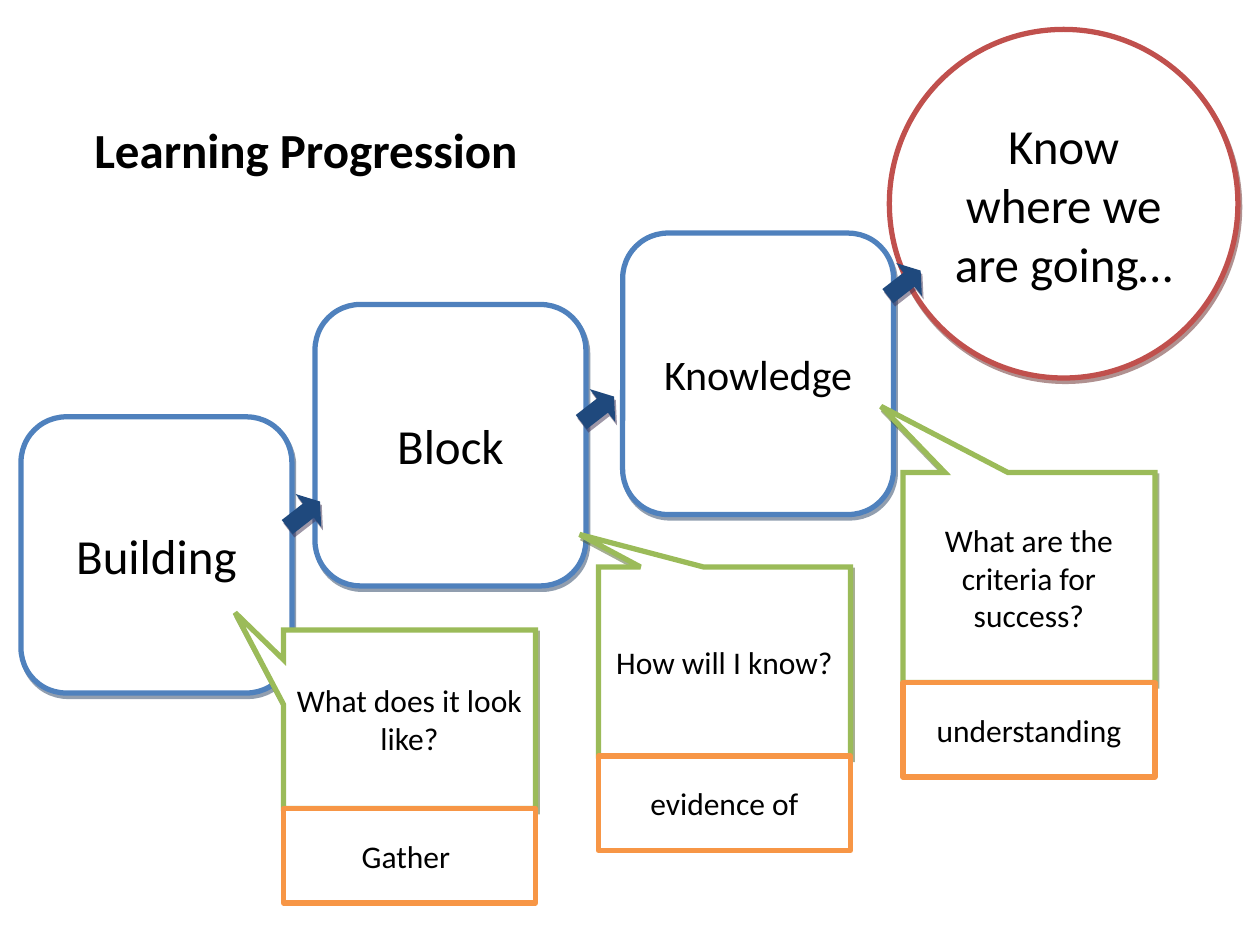
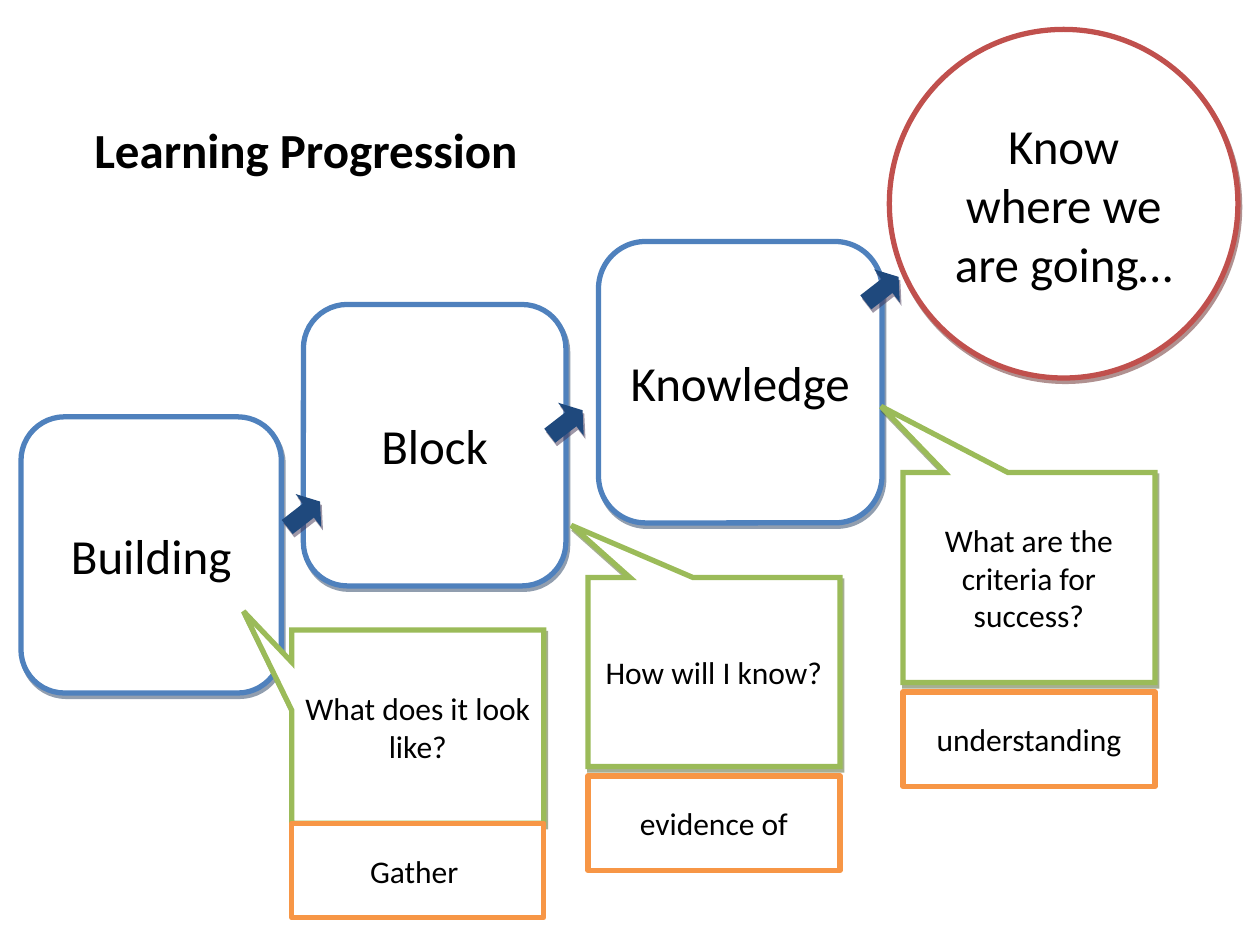
from lxml import etree
from pptx import Presentation
from pptx import util as u
from pptx.dml.color import RGBColor
from pptx.enum import shapes, text
from pptx.oxml import ns

# Shared style
INK = {
    "white": "FFFFFF", "black": "000000", "blue": "4F81BD", "red": "C0504D",
    "green": "9BBB59", "orange": "F79646", "navy": "1F497D",
}
SHADE = {"blue": "243F60", "red": "622423", "green": "4E6128", "navy": "3F3151"}
FONT = "Calibri"
KIND = shapes.MSO_SHAPE
MID = text.MSO_ANCHOR.MIDDLE
MAIN, NOTE = 28, 18

# Grid of 120 columns by 90 rows
WIDE, HIGH = u.Inches(10), u.Inches(7.5)
COL, ROW = WIDE / 120, HIGH / 90
NOTE_W, TAG_H = 24, 9

STEPS = ["Building", "Block", "Knowledge"]
ASKS = ["What does it look like?", "How will I know?",
        "What are the criteria for success?"]
TAGS = ["Gather ", "evidence of", "understanding"]

# Per slide: boxes (left, top, width, height), text sizes, arrow corners,
# notes (left, top, height, tip x, tip y, gap above the tag)
LAST = (86, 45, 20, -0.587, -0.815)
PLANS = [
    {
        "boxes": [(2, 39.7, 25.8, 26.3), (30, 29, 25.8, 26.8),
                  (59.3, 22.2, 25.8, 26.8)],
        "sizes": [MAIN, MAIN, 24],
        "arrows": [(27.2, 47.8), (55.2, 37.8), (84.4, 25.8)],
        "notes": [(27, 60, 17, -0.692, -0.597, 0),
                  (57, 54, 18, -0.575, -0.672, 0), (*LAST, 0)],
    },
    {
        "boxes": [(2, 39.7, 24.8, 26.3), (28.9, 29, 25, 26.8),
                  (57, 23, 27, 26.8)],
        "sizes": [MAIN] * 3,
        "arrows": [(27.2, 47.8), (52.2, 39.1), (82.3, 26.4)],
        "notes": [(27.8, 60, 18.4, -0.692, -0.597, 0),
                  (56, 55, 18, -0.566, -0.776, 0.9), (*LAST, 0.9)],
    },
]


def rgb(name):
    return RGBColor.from_string(INK.get(name, name))


def cast(form, hue):
    """Add a hard, half-clear shadow below the shape."""
    fx = form._element.spPr.find(ns.qn("a:effectLst"))
    drop = etree.SubElement(fx, ns.qn("a:outerShdw"), dist=str(u.Pt(2.2)),
                            dir=str(63 * 60000), algn="ctr", rotWithShape="0")
    tint = etree.SubElement(drop, ns.qn("a:srgbClr"), val=SHADE[hue])
    etree.SubElement(tint, ns.qn("a:alpha"), val="50000")


def shape(slide, kind, left, top, width, height, line=None, fill="white",
          shade=True, adj=()):
    form = slide.shapes.add_shape(kind, round(left * COL), round(top * ROW),
                                  round(width * COL), round(height * ROW))
    for i, val in enumerate(adj):
        form.adjustments[i] = val
    form.fill.solid()
    form.fill.fore_color.rgb = rgb(fill)
    form.shadow.inherit = False
    if line is None:
        form.line.fill.background()
        return form
    form.line.color.rgb = rgb(line)
    form.line.width = u.Pt(3)
    if shade:
        etree.SubElement(form.line._get_or_add_ln(), ns.qn("a:miter"),
                         lim="800000")
        cast(form, line)
    return form


def write(form, words, size=NOTE, bold=False, align=text.PP_ALIGN.CENTER,
          anchor=MID, after=0, inset=None):
    frame = form.text_frame
    frame.word_wrap = True
    frame.vertical_anchor = anchor
    if inset is not None:
        frame.margin_left = frame.margin_right = u.Inches(inset)
        frame.margin_top = frame.margin_bottom = u.Inches(inset)
    para = frame.paragraphs[0]
    para.alignment = align
    para.space_after = u.Pt(after)
    run = para.add_run()
    run.text = words
    run.font.name = FONT
    run.font.size = u.Pt(size)
    run.font.bold = bold
    run.font.color.rgb = rgb("black")


def title(slide):
    form = shape(slide, KIND.RECTANGLE, 7.8, 10.8, 47.2, 12.2)
    write(form, "Learning Progression", size=MAIN, bold=True, after=10,
          align=text.PP_ALIGN.LEFT, anchor=text.MSO_ANCHOR.TOP)


def step(slide, words, box, size):
    form = shape(slide, KIND.ROUNDED_RECTANGLE, *box, line="blue",
                 adj=[0.167])
    write(form, words, size=size)


def goal(slide):
    form = shape(slide, KIND.OVAL, 84.7, 2.8, 33.2, 33.2, line="red")
    write(form, "Know where we are going…", size=MAIN)


def arrow(slide, left, top):
    form = shape(slide, KIND.RIGHT_ARROW, left, top, 3.4, 2.4, line="navy",
                 fill="navy", adj=[0.5, 0.352])
    form.rotation = 322.1


def note(slide, ask, tag, place):
    """Draw a question callout with its tag underneath."""
    left, top, height, tip_x, tip_y, gap = place
    call = shape(slide, KIND.RECTANGULAR_CALLOUT, left, top, NOTE_W, height,
                 line="green", adj=[tip_x, tip_y])
    write(call, ask, inset=0.05 if ask == ASKS[-1] else None)
    base = shape(slide, KIND.RECTANGLE, left, top + height + gap, NOTE_W,
                 TAG_H, line="orange", shade=False)
    write(base, tag)


def build(deck, plan):
    slide = deck.slides.add_slide(deck.slide_layouts[6])
    for words, box, size in zip(STEPS, plan["boxes"], plan["sizes"]):
        step(slide, words, box, size)
    goal(slide)
    title(slide)
    for ask, tag, place in zip(ASKS, TAGS, plan["notes"]):
        note(slide, ask, tag, place)
    for spot in plan["arrows"]:
        arrow(slide, *spot)


def main():
    deck = Presentation()
    deck.slide_width, deck.slide_height = WIDE, HIGH
    for plan in PLANS:
        build(deck, plan)
    deck.save("out.pptx")


if __name__ == "__main__":
    main()
